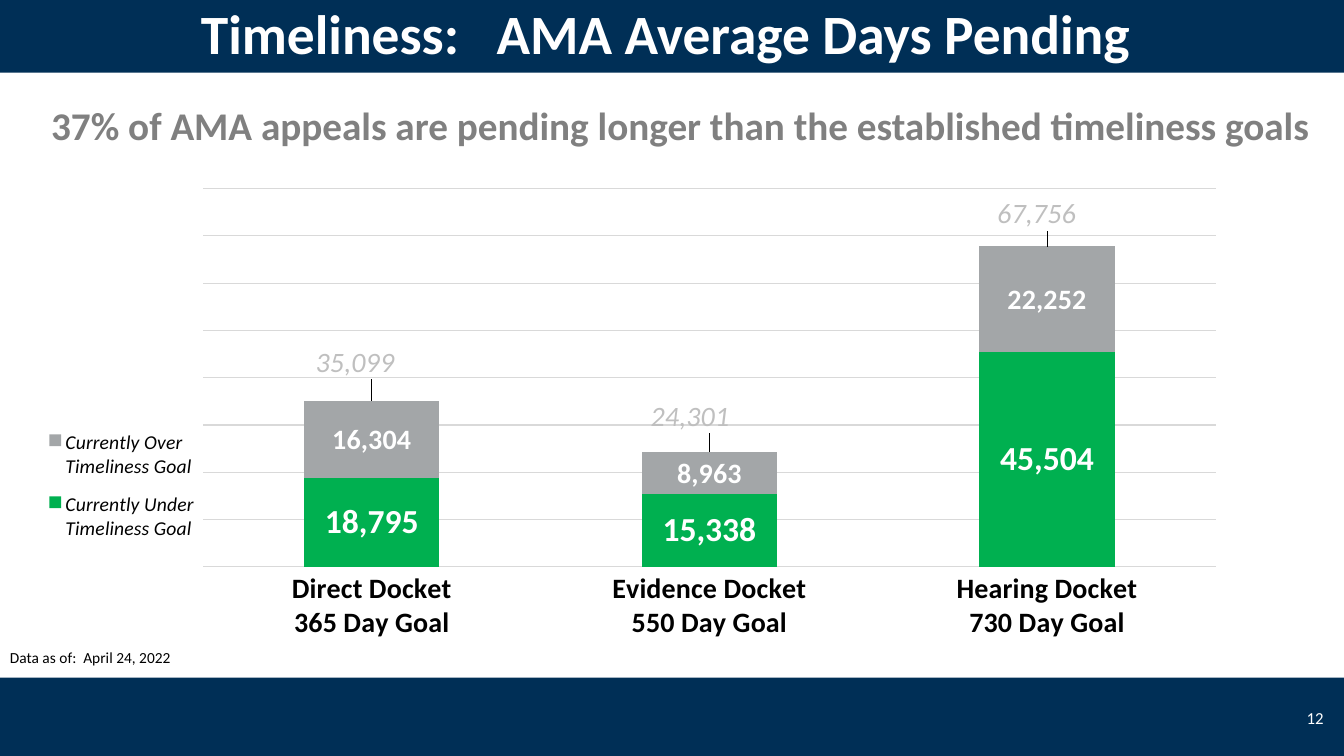
from pptx import Presentation
from pptx.chart.data import CategoryChartData
from pptx.dml.color import RGBColor
from pptx.enum.chart import XL_CHART_TYPE, XL_LABEL_POSITION, XL_LEGEND_POSITION, XL_TICK_MARK
from pptx.enum.shapes import MSO_SHAPE
from pptx.enum.text import MSO_ANCHOR, PP_ALIGN
from pptx.oxml import parse_xml
from pptx.oxml.ns import nsdecls
from pptx.util import Pt

STACKED = XL_CHART_TYPE.COLUMN_STACKED
ABOVE = XL_LABEL_POSITION.ABOVE
LEGEND_LEFT = XL_LEGEND_POSITION.LEFT
NO_TICK = XL_TICK_MARK.NONE
RECTANGLE = MSO_SHAPE.RECTANGLE
MIDDLE = MSO_ANCHOR.MIDDLE
LEFT, CENTER, RIGHT = PP_ALIGN.LEFT, PP_ALIGN.CENTER, PP_ALIGN.RIGHT

FONT = "Calibri"
NAVY, WHITE, BLACK = "002F56", "FFFFFF", "000000"
GREEN, GRAY, GRID = "00B050", "A3A6A8", "D9D9D9"
SUBTITLE_GRAY, TOTAL_GRAY = "808080", "BFBFBF"
NUMBER_FORMAT = "#,##0"

DOCKETS = ["Direct Docket\n365 Day Goal", "Evidence Docket\n550 Day Goal",
           "Hearing Docket\n730 Day Goal"]
UNDER_GOAL = [18795, 15338, 45504]
OVER_GOAL = [16304, 8963, 22252]
TOTAL_LABEL_SHIFTS = [(-0.013, -0.03), (-0.015, -0.025), (-0.008, -0.02)]


def color(hex_string):
    return RGBColor.from_string(hex_string)


def paint(fill, hex_string):
    fill.solid()
    fill.fore_color.rgb = color(hex_string)


def style_font(font, size, hex_string, bold=False, italic=False):
    font.name = FONT
    font.size = Pt(size)
    font.bold = bold
    font.italic = italic
    font.color.rgb = color(hex_string)


def style_line(line, hex_string):
    line.color.rgb = color(hex_string)
    line.width = Pt(0.75)


def place(shape, left, top, width, height):
    shape.left, shape.top = Pt(left), Pt(top)
    shape.width, shape.height = Pt(width), Pt(height)


def write(shape, text, size, hex_string, bold=False, align=LEFT):
    shape.text_frame.text = text
    para = shape.text_frame.paragraphs[0]
    para.alignment = align
    style_font(para.runs[0].font, size, hex_string, bold)


def add_text(page, bounds, text, size, hex_string, bold=False, align=LEFT, wrap=False):
    box = page.shapes.add_textbox(*map(Pt, bounds))
    box.text_frame.word_wrap = wrap
    write(box, text, size, hex_string, bold, align)
    return box


def add_title(page, text):
    title = page.shapes.title
    place(title, 0, -6, 960, 58)
    paint(title.fill, NAVY)
    title.text_frame.vertical_anchor = MIDDLE
    write(title, text, 39.6, WHITE, True, CENTER)


def add_footer_band(page):
    band = page.shapes.add_shape(RECTANGLE, 0, Pt(484), Pt(960), Pt(56))
    band.shadow.inherit = False
    paint(band.fill, NAVY)
    band.line.fill.background()


def manual_layout(x, y, width=None, height=None, inner=False):
    """Chart layout; without a size, x and y shift an element from its place."""
    parts = []
    if inner:
        parts.append('<c:layoutTarget val="inner"/>')
    if width:
        parts.append('<c:xMode val="edge"/><c:yMode val="edge"/>')
    sizes = {"x": x, "y": y, "w": width, "h": height}
    parts += [f'<c:{key} val="{value}"/>' for key, value in sizes.items() if value is not None]
    return parse_xml(f'<c:layout {nsdecls("c")}><c:manualLayout>{"".join(parts)}'
                     '</c:manualLayout></c:layout>')


def drop_layout(parent):
    for layout in parent.xpath("c:layout"):
        parent.remove(layout)


def move_totals_to_line(chart):
    """Turn the third column series into a line on the same axes."""
    columns = chart.element.xpath(".//c:barChart")[0]
    totals = columns.xpath("c:ser")[2]
    for flag in totals.xpath("c:invertIfNegative"):
        totals.remove(flag)
    axes = "".join(f'<c:axId val="{axis.get("val")}"/>' for axis in columns.xpath("c:axId"))
    line = parse_xml(f'<c:lineChart {nsdecls("c")}><c:grouping val="standard"/>'
                     f'<c:varyColors val="0"/><c:marker val="1"/>{axes}</c:lineChart>')
    line.insert(2, totals)
    columns.addnext(line)


def style_columns(plot):
    plot.gap_width, plot.overlap = 150, 100
    plot.vary_by_categories = False
    for series, fill, size in zip(plot.series, (GREEN, GRAY), (24, 20)):
        paint(series.format.fill, fill)
        labels = series.data_labels
        labels.show_value = True
        labels.number_format = NUMBER_FORMAT
        labels.number_format_is_linked = False
        style_font(labels.font, size, WHITE, True)


def style_totals(chart):
    """Hide the line and show its values as totals on white."""
    totals = chart.plots[1].series[0]
    totals.smooth = False
    totals.format.line.fill.background()
    totals.marker.style = None
    totals_xml = chart.element.xpath(".//c:lineChart/c:ser")[0]
    for marker in totals_xml.xpath("c:marker"):
        marker.insert(0, parse_xml(f'<c:symbol {nsdecls("c")} val="none"/>'))
    for index, shift in enumerate(TOTAL_LABEL_SHIFTS):
        label = totals.points[index].data_label
        style_font(label.font, 20, TOTAL_GRAY, italic=True)
        label.position = ABOVE
        label_index = totals_xml.xpath(f'c:dLbls/c:dLbl/c:idx[@val="{index}"]')[0]
        label_index.addnext(parse_xml(
            f'<c:spPr {nsdecls("c", "a")}><a:solidFill><a:srgbClr val="{WHITE}"/>'
            '</a:solidFill></c:spPr>'))
        label_index.addnext(manual_layout(*shift))


def style_axes(chart):
    dockets = chart.category_axis
    dockets.major_tick_mark = dockets.minor_tick_mark = NO_TICK
    style_line(dockets.format.line, GRID)
    style_font(dockets.tick_labels.font, 20, BLACK, True)
    values = chart.value_axis
    values.minimum_scale, values.maximum_scale, values.major_unit = 0, 80000, 10000
    values.has_major_gridlines = True
    style_line(values.major_gridlines.format.line, GRID)
    values.visible = False


def style_legend(chart):
    chart.has_legend = True
    legend = chart.legend
    legend.position = LEGEND_LEFT
    legend.include_in_layout = False
    style_font(legend.font, 14, BLACK, italic=True)
    legend_xml = chart.element.xpath(".//c:legend")[0]
    drop_layout(legend_xml)
    side = legend_xml.xpath("c:legendPos")[0]
    side.addnext(manual_layout(0.02, 0.51, 0.13, 0.24))
    side.addnext(parse_xml(f'<c:legendEntry {nsdecls("c")}><c:idx val="2"/>'
                           '<c:delete val="1"/></c:legendEntry>'))


def add_docket_chart(page):
    data = CategoryChartData(number_format=NUMBER_FORMAT)
    data.categories = DOCKETS
    data.add_series("Currently Under Timeliness Goal", UNDER_GOAL)
    data.add_series("Currently Over Timeliness Goal", OVER_GOAL)
    data.add_series("Series 3", [sum(pair) for pair in zip(UNDER_GOAL, OVER_GOAL)])
    bounds = map(Pt, (8.64, 89.28, 921.6, 408.96))
    chart = page.shapes.add_chart(STACKED, *bounds, data).chart
    chart.has_title = False
    style_font(chart.font, 10, BLACK)
    move_totals_to_line(chart)
    style_columns(chart.plots[0])
    style_totals(chart)
    style_axes(chart)
    style_legend(chart)
    plot_area = chart.element.xpath(".//c:plotArea")[0]
    drop_layout(plot_area)
    plot_area.insert(0, manual_layout(0.148, 0.111, 0.785, 0.661, inner=True))


def main():
    deck = Presentation()
    deck.slide_width, deck.slide_height = Pt(960), Pt(540)
    page = deck.slides.add_slide(deck.slide_layouts[5])

    # Bands, title and page number
    add_footer_band(page)
    add_title(page, "Timeliness:   AMA Average Days Pending ")
    number = add_text(page, (912, 498, 40.5, 29), "12", 12, WHITE, align=RIGHT, wrap=True)
    number.text_frame.vertical_anchor = MIDDLE

    # Chart with its headline and date
    add_docket_chart(page)
    add_text(page, (29.5, 68.5, 930, 41),
             "37% of AMA appeals are pending longer than the established timeliness goals",
             28, SUBTITLE_GRAY, True)
    add_text(page, (0, 459.5, 130, 21), "Data as of:  April 24, 2022", 11, BLACK)

    deck.save("out.pptx")


if __name__ == "__main__":
    main()
